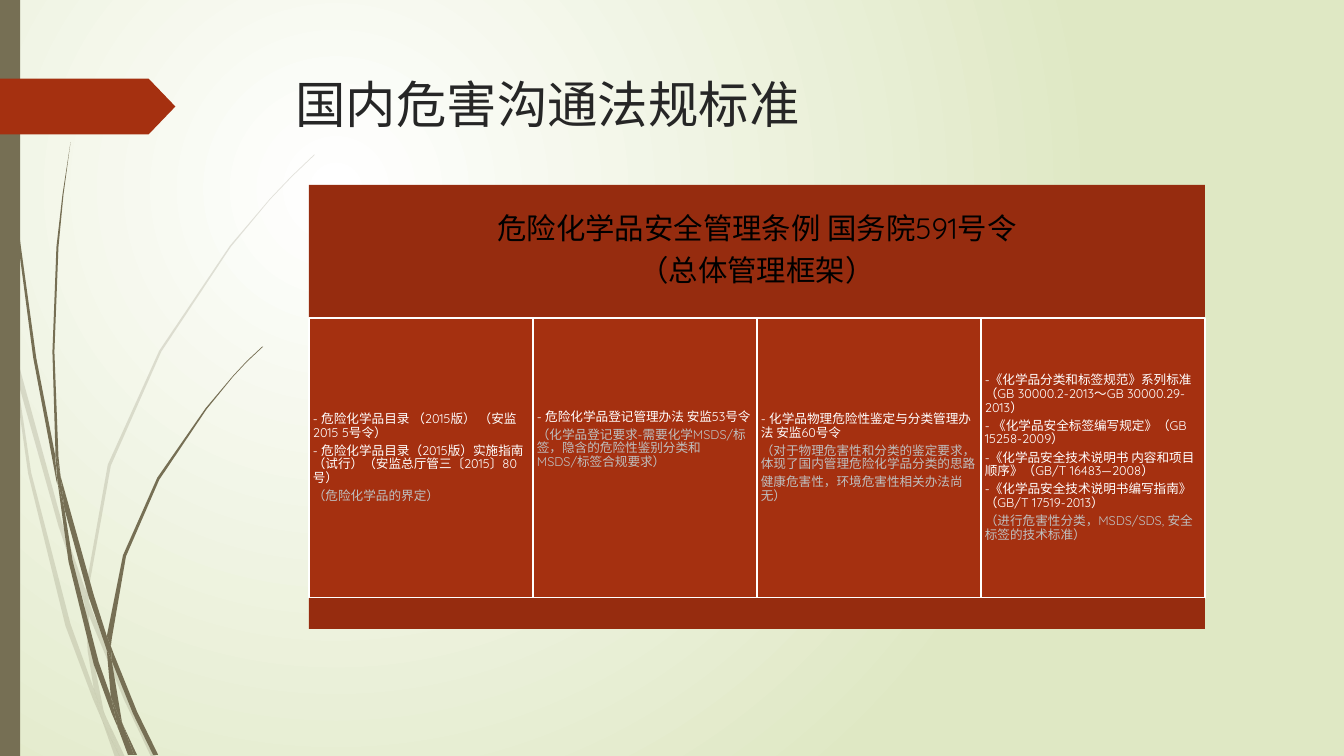
from lxml.etree import SubElement
from pptx import Presentation
from pptx.dml.color import RGBColor
from pptx.enum.shapes import MSO_SHAPE
from pptx.enum.text import MSO_ANCHOR, PP_ALIGN
from pptx.oxml.ns import qn
from pptx.util import Pt

FONT = "Quicksand"
OLIVE, RUST, DARK_RUST = "766F54", "A53010", "962C0F"
WHITE, GREY, BLACK, INK = "FFFFFF", "BFBFBF", "000000", "262626"

# Outlines of the grass segments, on a grid of 0.72 points.
GRID = Pt(0.72)
PALE_GRASS = [
    [(11, 350), (9, 322), (0, 282), (0, 299), (10, 344)],
    [(58, 522), (84, 599), (85, 586), (62, 520), (14, 345), (17, 376)],
    [(92, 607), (88, 596), (88, 610), (123, 694), (150, 751), (155, 751), (127, 692)],
    [(119, 751), (124, 751), (105, 711)],
    [(93, 683), (70, 619), (31, 469), (17, 376), (11, 350), (28, 470), (65, 621),
     (92, 693), (101, 714), (99, 707)],
    [(84, 599), (87, 646), (93, 683), (96, 692), (105, 711), (103, 706), (91, 646),
     (88, 610), (88, 608)],
    [(88, 584), (110, 462), (160, 349), (229, 245), (268, 198), (290, 175), (312, 154),
     (312, 153), (289, 175), (268, 197), (228, 244), (158, 348), (107, 461), (85, 584),
     (85, 586), (88, 596)],
    [(101, 714), (114, 751), (119, 751)],
    [(88, 608), (88, 610), (88, 596), (85, 586), (84, 599)],
    [(96, 692), (93, 683), (99, 707), (101, 714), (119, 751), (105, 711)],
]
DARK_GRASS = [
    [(7, 110), (17, 233), (33, 355), (56, 477), (57, 481), (55, 457), (55, 453),
     (36, 355), (19, 232), (8, 109), (5, 48), (4, 0), (3, 0), (4, 48)],
    [(88, 592), (106, 645), (106, 633), (106, 631), (93, 590), (60, 472), (64, 505)],
    [(113, 649), (110, 641), (111, 656), (132, 708), (152, 749), (157, 749), (136, 706)],
    [(110, 691), (98, 657), (72, 556), (64, 505), (57, 477), (68, 557), (93, 659),
     (111, 708), (117, 722), (116, 717)],
    [(60, 472), (58, 453), (54, 349), (58, 245), (63, 193), (70, 141), (62, 193),
     (56, 245), (52, 349), (55, 449)],
    [(133, 749), (136, 749), (122, 719)],
    [(57, 477), (64, 505), (60, 472), (55, 449), (55, 453)],
    [(111, 633), (125, 552), (158, 476), (205, 406), (231, 374), (245, 359), (261, 344),
     (260, 344), (245, 358), (231, 373), (204, 405), (156, 474), (122, 551), (106, 631),
     (110, 641)],
    [(117, 722), (127, 749), (131, 749)],
    [(106, 645), (110, 691), (116, 706), (122, 719), (121, 716), (111, 656), (109, 651)],
    [(106, 645), (109, 651), (111, 656), (110, 641), (106, 631), (106, 633)],
    [(116, 706), (110, 691), (116, 717), (117, 722), (130, 749), (133, 749), (122, 719)],
]

FRAMEWORK = ["危险化学品安全管理条例 国务院591号令", "（总体管理框架）"]

# Each column holds its regulations, its remarks and its bottom inset.
COLUMNS = [
    (["- 危险化学品目录 （2015版） （安监2015 5号令）",
      "- 危险化学品目录（2015版）实施指南（试行）（安监总厅管三〔2015〕80号）"],
     ["（危险化学品的界定）"], 2.8),
    (["- 危险化学品登记管理办法 安监53号令"],
     ["（化学品登记要求-需要化学MSDS/标签，隐含的危险性鉴别分类和MSDS/标签合规要求）"], 29),
    (["- 化学品物理危险性鉴定与分类管理办法 安监60号令"],
     ["（对于物理危害性和分类的鉴定要求，体现了国内管理危险化学品分类的思路",
      "健康危害性，环境危害性相关办法尚无）"], 2.8),
    (["-《化学品分类和标签规范》系列标准（GB 30000.2-2013～GB 30000.29-2013）",
      "- 《化学品安全标签编写规定》（GB 15258-2009）",
      "-《化学品安全技术说明书 内容和项目顺序》（GB/T 16483—2008）",
      "-《化学品安全技术说明书编写指南》（GB/T 17519-2013）"],
     ["（进行危害性分类，MSDS/SDS, 安全标签的技术标准）"], 2.8),
]


def rgb(color):
    return RGBColor.from_string(color)


def paint(shape, color):
    shape.shadow.inherit = False
    shape.fill.solid()
    shape.fill.fore_color.rgb = rgb(color)
    shape.line.fill.background()


def paint_background(slide):
    fill = slide.background.fill
    fill.gradient()
    for stop, color in zip(fill.gradient_stops, (WHITE, "DFE8C4")):
        stop.color.rgb = rgb(color)
    gradient = slide.element.find(".//" + qn("a:gradFill"))
    gradient.remove(gradient.find(qn("a:lin")))
    circle = SubElement(gradient, qn("a:path"), {"path": "circle"})
    SubElement(circle, qn("a:fillToRect"),
               {"l": "50000", "t": "50000", "r": "100000", "b": "100000"})


def add_grass(slide, segments, opacity):
    for outline in segments:
        builder = slide.shapes.build_freeform(*outline[0], scale=GRID)
        builder.add_line_segments(outline[1:])
        blade = builder.convert_to_shape()
        paint(blade, OLIVE)
        if opacity < 100:
            tint = blade.element.spPr.find(".//" + qn("a:srgbClr"))
            SubElement(tint, qn("a:alpha"), {"val": str(opacity * 1000)})


def add_panel(slide, left, top, width, height, color, kind=MSO_SHAPE.RECTANGLE):
    panel = slide.shapes.add_shape(kind, Pt(left), Pt(top), Pt(width), Pt(height))
    paint(panel, color)
    return panel


def write(panel, lines, size, align, inset, bottom):
    """Fill a panel with (text, colour) paragraphs, centred vertically."""
    frame = panel.text_frame
    frame.word_wrap = True
    frame.vertical_anchor = MSO_ANCHOR.MIDDLE
    frame.margin_left = frame.margin_right = frame.margin_top = Pt(inset)
    frame.margin_bottom = Pt(bottom)
    for number, (text, color) in enumerate(lines):
        paragraph = frame.paragraphs[0] if number == 0 else frame.add_paragraph()
        paragraph.text = text
        paragraph.alignment = align
        paragraph.line_spacing = 0.9
        paragraph.space_after = Pt(0.35 * size)
        paragraph.font.name = FONT
        paragraph.font.size = Pt(size)
        paragraph.font.color.rgb = rgb(color)


def add_title(slide, text):
    frame = slide.shapes.add_textbox(Pt(204), Pt(49), Pt(702), Pt(101)).text_frame
    frame.word_wrap = True
    heading = frame.paragraphs[0]
    heading.text = text
    heading.font.name = FONT
    heading.font.size = Pt(36)
    heading.font.color.rgb = rgb(INK)


def add_regulations(slide, left=220.7, top=132, column_width=160):
    total_width = column_width * len(COLUMNS)
    header_height, column_height, footer_height = 95, 200.2, 22
    header = add_panel(slide, left, top, total_width, header_height, DARK_RUST)
    write(header, [(line, BLACK) for line in FRAMEWORK], 21, PP_ALIGN.CENTER, 6.5, 6.5)
    top += header_height
    for number, (rules, remarks, bottom) in enumerate(COLUMNS):
        column = add_panel(slide, left + number * column_width, top,
                           column_width, column_height, RUST)
        column.line.color.rgb = rgb(WHITE)
        column.line.width = Pt(1.25)
        lines = [(rule, WHITE) for rule in rules] + [(remark, GREY) for remark in remarks]
        write(column, lines, 9, PP_ALIGN.LEFT, 2.8, bottom)
    add_panel(slide, left, top + column_height, total_width, footer_height, DARK_RUST)


def main():
    deck = Presentation()
    deck.slide_width, deck.slide_height = Pt(960), Pt(540)
    slide = deck.slides.add_slide(deck.slide_layouts[6])
    paint_background(slide)
    add_grass(slide, PALE_GRASS, opacity=20)
    add_grass(slide, DARK_GRASS, opacity=100)
    add_panel(slide, 0, 0, 14.4, 540, OLIVE)
    arrow = add_panel(slide, 0, 56.2, 125.3, 39.8, RUST, MSO_SHAPE.PENTAGON)
    arrow.adjustments[0] = 0.48
    add_title(slide, "国内危害沟通法规标准")
    add_regulations(slide)
    deck.save("out.pptx")


if __name__ == "__main__":
    main()
